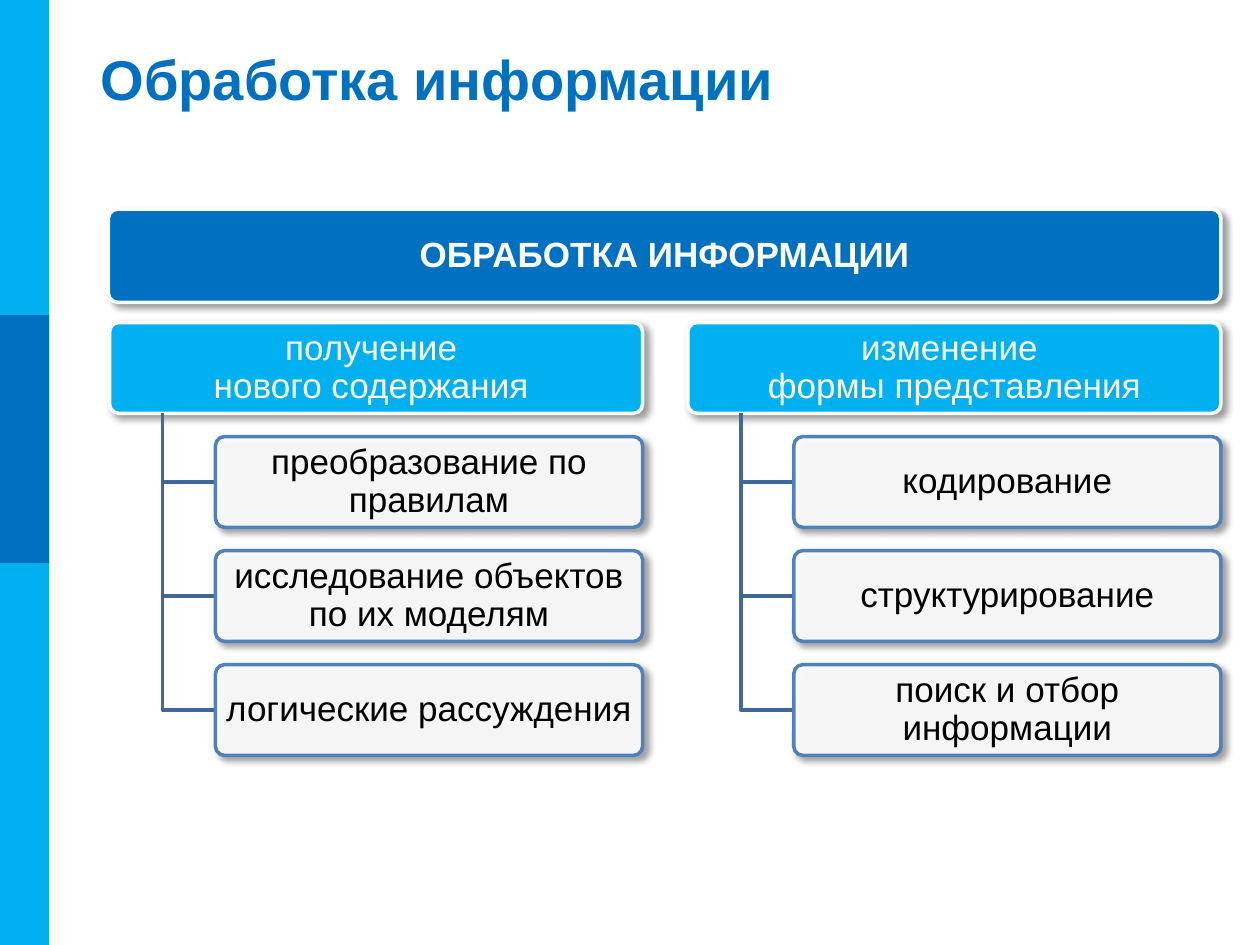
from dataclasses import dataclass

from lxml.etree import SubElement
from pptx import Presentation
from pptx.dml.color import RGBColor
from pptx.enum.shapes import MSO_SHAPE
from pptx.enum.text import MSO_ANCHOR, PP_ALIGN
from pptx.oxml.ns import qn
from pptx.util import Inches, Pt

SKY = "00B0F0"
BLUE = "0070C0"
WHITE = "FFFFFF"
BLACK = "000000"
EDGE = "4F81BD"
STEM = "3F6797"


@dataclass(frozen=True)
class Look:
    fill: str
    line: str
    ink: str
    bold: bool = False
    alpha: int = 100


@dataclass(frozen=True)
class Column:
    left: float
    head: str
    items: tuple[str, ...]


TOP = Look(BLUE, WHITE, WHITE, bold=True)
HEAD = Look(SKY, WHITE, WHITE)
ITEM = Look(WHITE, EDGE, BLACK, alpha=90)

COLUMNS = (
    Column(0.87, "получение \nнового содержания ",
           ("преобразование по правилам",
            "исследование объектов по их моделям",
            "логические рассуждения")),
    Column(5.46, "изменение \nформы представления",
           ("кодирование", "структурирование", "поиск и отбор информации")),
)
HEAD_TOP = 2.56
HEAD_WIDTH = 4.23
HEIGHT = 0.72
STEP = 0.905
STEM_SHIFT = 0.42
ITEM_SHIFT = 0.84


def paint(color, code: str) -> None:
    color.rgb = RGBColor.from_string(code)


def add_alpha(node, share: int) -> None:
    SubElement(node, qn("a:alpha"), val=str(share * 1000))


def add_shadow(shape) -> None:
    shape.shadow.inherit = False
    effects = shape._element.spPr.find(qn("a:effectLst"))
    outer = SubElement(effects, qn("a:outerShdw"), blurRad=str(Pt(4)),
                       dist=str(Pt(3)), dir=str(45 * 60000), rotWithShape="0")
    add_alpha(SubElement(outer, qn("a:srgbClr"), val=BLACK), 40)


def add_bar(slide, top: float, height: float, code: str) -> None:
    bar = slide.shapes.add_shape(MSO_SHAPE.RECTANGLE, 0, Inches(top),
                                 Inches(0.39), Inches(height))
    bar.shadow.inherit = False
    bar.fill.solid()
    paint(bar.fill.fore_color, code)
    bar.line.fill.background()


def add_title(slide, text: str) -> None:
    box = slide.shapes.add_textbox(Inches(0.7), Inches(0.3),
                                   Inches(9.02), Inches(0.64))
    frame = box.text_frame
    frame.word_wrap = True
    frame.vertical_anchor = MSO_ANCHOR.MIDDLE
    line = frame.paragraphs[0]
    line.text = text
    line.font.name = "Arial"
    line.font.size = Pt(32)
    line.font.bold = True
    paint(line.font.color, BLUE)


def add_box(slide, left: float, top: float, width: float, height: float,
            text: str, look: Look) -> None:
    box = slide.shapes.add_shape(MSO_SHAPE.ROUNDED_RECTANGLE, Inches(left),
                                 Inches(top), Inches(width), Inches(height))
    box.adjustments[0] = 0.1
    box.fill.solid()
    paint(box.fill.fore_color, look.fill)
    if look.alpha < 100:
        add_alpha(box._element.spPr.find(qn("a:solidFill"))[0], look.alpha)
    paint(box.line.color, look.line)
    box.line.width = Pt(2)
    add_shadow(box)
    frame = box.text_frame
    frame.word_wrap = True
    frame.vertical_anchor = MSO_ANCHOR.MIDDLE
    frame.margin_left = frame.margin_right = Inches(0.02)
    frame.margin_top = frame.margin_bottom = Inches(0.02)
    line = frame.paragraphs[0]
    line.text = text
    line.alignment = PP_ALIGN.CENTER
    line.line_spacing = 0.9
    line.font.name = "Arial"
    line.font.size = Pt(20)
    line.font.bold = look.bold
    paint(line.font.color, look.ink)


def add_stem(slide, left: float, top: float, right: float, end: float) -> None:
    pen = slide.shapes.build_freeform(Inches(left), Inches(top))
    pen.add_line_segments([(Inches(left), Inches(end)),
                           (Inches(right), Inches(end))], close=False)
    stem = pen.convert_to_shape()
    stem.shadow.inherit = False
    stem.fill.background()
    paint(stem.line.color, STEM)
    stem.line.width = Pt(2)


def add_column(slide, column: Column) -> None:
    add_box(slide, column.left, HEAD_TOP, HEAD_WIDTH, HEIGHT, column.head, HEAD)
    left = column.left + ITEM_SHIFT
    for row, text in enumerate(column.items, 1):
        top = HEAD_TOP + row * STEP
        add_stem(slide, column.left + STEM_SHIFT, HEAD_TOP + HEIGHT,
                 left, top + HEIGHT / 2)
        add_box(slide, left, top, HEAD_WIDTH - ITEM_SHIFT, HEIGHT, text, ITEM)


def main() -> None:
    deck = Presentation()
    deck.slide_width = Inches(10)
    deck.slide_height = Inches(7.5)
    slide = deck.slides.add_slide(deck.slide_layouts[6])
    add_bar(slide, 0, 7.5, SKY)
    add_bar(slide, 2.5, 1.97, BLUE)
    add_title(slide, "Обработка информации")
    for column in COLUMNS:
        add_column(slide, column)
    add_box(slide, 0.86, 1.66, 8.83, 0.74, "ОБРАБОТКА ИНФОРМАЦИИ", TOP)
    deck.save("out.pptx")


if __name__ == "__main__":
    main()
